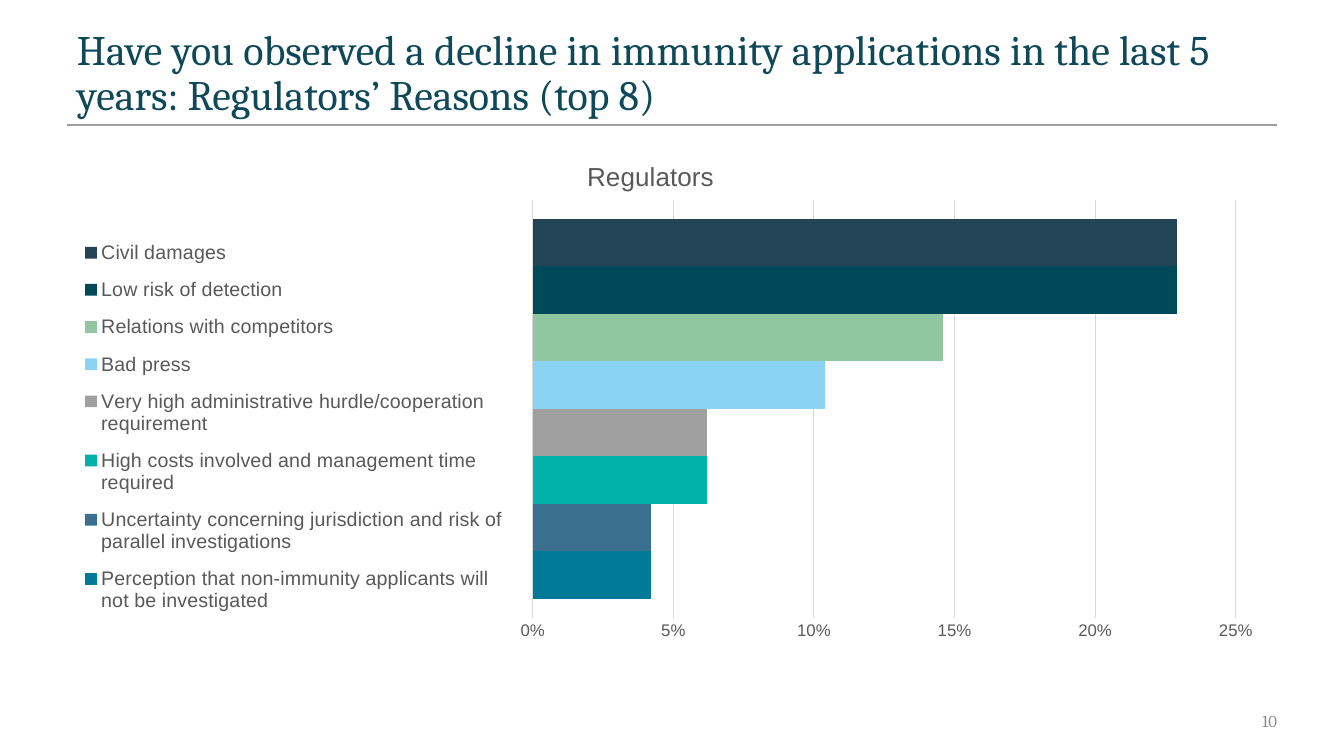
from pptx import Presentation
from pptx import util as u
from pptx.chart.data import CategoryChartData
from pptx.dml.color import RGBColor
from pptx.enum import chart as charts, shapes, text
from pptx.oxml import parse_xml
from pptx.oxml.ns import nsdecls, qn

EMU_PER_PX = 914400 / 100.8
GREY = "595959"
REASONS = [
    ("Perception that non-immunity applicants will not be investigated", 0.042, "007A96"),
    ("Uncertainty concerning jurisdiction and risk of parallel investigations", 0.042, "3A6F8F"),
    ("High costs involved and management time required", 0.062, "00B2A9"),
    ("Very high administrative hurdle/cooperation requirement", 0.062, "A0A0A0"),
    ("Bad press", 0.104, "8BD3F5"),
    ("Relations with competitors", 0.146, "90C6A2"),
    ("Low risk of detection", 0.229, "00495A"),
    ("Civil damages", 0.229, "234356"),
]


def px(length):
    """Turn a length in px into EMU."""
    return u.Emu(round(length * EMU_PER_PX))


def color(value):
    """Turn a hex string into a colour."""
    return RGBColor.from_string(value)


def set_font(font, size, name="Arial", fill=GREY):
    """Set the size, typeface and colour of a font, without bold."""
    font.size, font.name, font.bold = u.Pt(size), name, False
    font.color.rgb = color(fill)


def add_text(slide, box, content, *, size, fill, name="Cambria", anchor=text.MSO_ANCHOR.MIDDLE,
             align=text.PP_ALIGN.LEFT, right_inset=10, spacing=1.0):
    """Add a text box with one formatted paragraph."""
    frame = slide.shapes.add_textbox(*map(px, box)).text_frame
    frame.word_wrap, frame.vertical_anchor = True, anchor
    frame.margin_left, frame.margin_right = px(10), px(right_inset)
    frame.margin_top = frame.margin_bottom = px(5)
    paragraph = frame.paragraphs[0]
    paragraph.alignment, paragraph.line_spacing = align, spacing
    run = paragraph.add_run()
    run.text = content
    set_font(run.font, size, name, fill)


def add_header(slide, box):
    """Add the title with the rule along the bottom of its box."""
    left, top, width, height = box
    add_text(slide, box,
             "Have you observed a decline in immunity applications in the last 5 years: "
             "Regulators’ Reasons (top 8)",
             size=30, fill="0F4859", anchor=text.MSO_ANCHOR.BOTTOM, spacing=0.9)
    bottom = top + height
    rule = slide.shapes.add_connector(shapes.MSO_CONNECTOR.STRAIGHT, px(left), px(bottom),
                                      px(left + width), px(bottom))
    rule.line.color.rgb, rule.line.width = color("A0A0A0"), u.Pt(1)
    rule._element.spPr.append(parse_xml(f"<a:effectLst {nsdecls('a')}/>"))


def place(element, **position):
    """Give a chart part a manual layout in fractions of the chart."""
    inner = '<c:layoutTarget val="inner"/>' if element.tag == qn("c:plotArea") else ""
    modes = "".join(f'<c:{axis}Mode val="edge"/>' for axis in "xy")
    values = "".join(f'<c:{key} val="{value}"/>' for key, value in position.items())
    layout = parse_xml(f"<c:layout {nsdecls('c')}><c:manualLayout>{inner}{modes}{values}"
                       "</c:manualLayout></c:layout>")
    for old in element.findall(qn("c:layout")):
        element.remove(old)
    before = {qn("c:title"): "c:tx", qn("c:legend"): "c:legendPos"}.get(element.tag)
    index = element.index(element.find(qn(before))) + 1 if before else 0
    element.insert(index, layout)


def add_reasons_chart(slide, box):
    """Add the bar chart of reasons with its legend on the left."""
    data = CategoryChartData(number_format="0%")
    data.categories = ["1"]
    for name, share, _ in REASONS:
        data.add_series(name, [share])
    chart = slide.shapes.add_chart(charts.XL_CHART_TYPE.BAR_CLUSTERED, *map(px, box), data).chart
    set_font(chart.font, 10, fill="000000")

    chart.has_title = True
    chart.chart_title.text_frame.text = "Regulators"
    set_font(chart.chart_title.text_frame.paragraphs[0].runs[0].font, 18.6)
    chart.chart_title.include_in_layout = False
    place(chart.chart_title._element, x=0.426, y=0.02)

    chart.has_legend = True
    chart.legend.position = charts.XL_LEGEND_POSITION.RIGHT
    chart.legend.include_in_layout = False
    set_font(chart.legend.font, 14)
    place(chart.legend._element, x=0.01, y=0.15, w=0.355, h=0.72)

    plot = chart.plots[0]
    plot.gap_width, plot.overlap, plot.vary_by_categories = 80, 0, False
    for series, (_, _, fill) in zip(plot.series, REASONS):
        series.invert_if_negative = False
        series.format.fill.solid()
        series.format.fill.fore_color.rgb = color(fill)
    place(chart._chartSpace.chart.plotArea, x=0.385, y=0.102, w=0.581, h=0.751)

    chart.category_axis.visible = False
    axis = chart.value_axis
    axis.minimum_scale, axis.maximum_scale, axis.major_unit = 0, 0.25, 0.05
    axis.major_tick_mark = axis.minor_tick_mark = charts.XL_TICK_MARK.NONE
    axis.tick_labels.number_format, axis.tick_labels.number_format_is_linked = "0%", False
    set_font(axis.tick_labels.font, 12)
    axis.format.line.fill.background()
    axis.major_gridlines.format.line.color.rgb = color("D9D9D9")
    axis.major_gridlines.format.line.width = u.Pt(0.75)


def add_page_number(slide, box):
    """Add the page number at the right of its box."""
    add_text(slide, box, "10", size=12, fill="8C8C8C", align=text.PP_ALIGN.RIGHT, right_inset=0)


def main():
    """Build and save the slide."""
    presentation = Presentation()
    presentation.slide_width, presentation.slide_height = px(1344), px(756)
    slide = presentation.slides.add_slide(presentation.slide_layouts[6])
    add_header(slide, (67, 58, 1210, 67))
    add_reasons_chart(slide, (67, 143, 1210, 557))
    add_page_number(slide, (975, 701, 302, 40))
    presentation.save("out.pptx")


if __name__ == "__main__":
    main()
